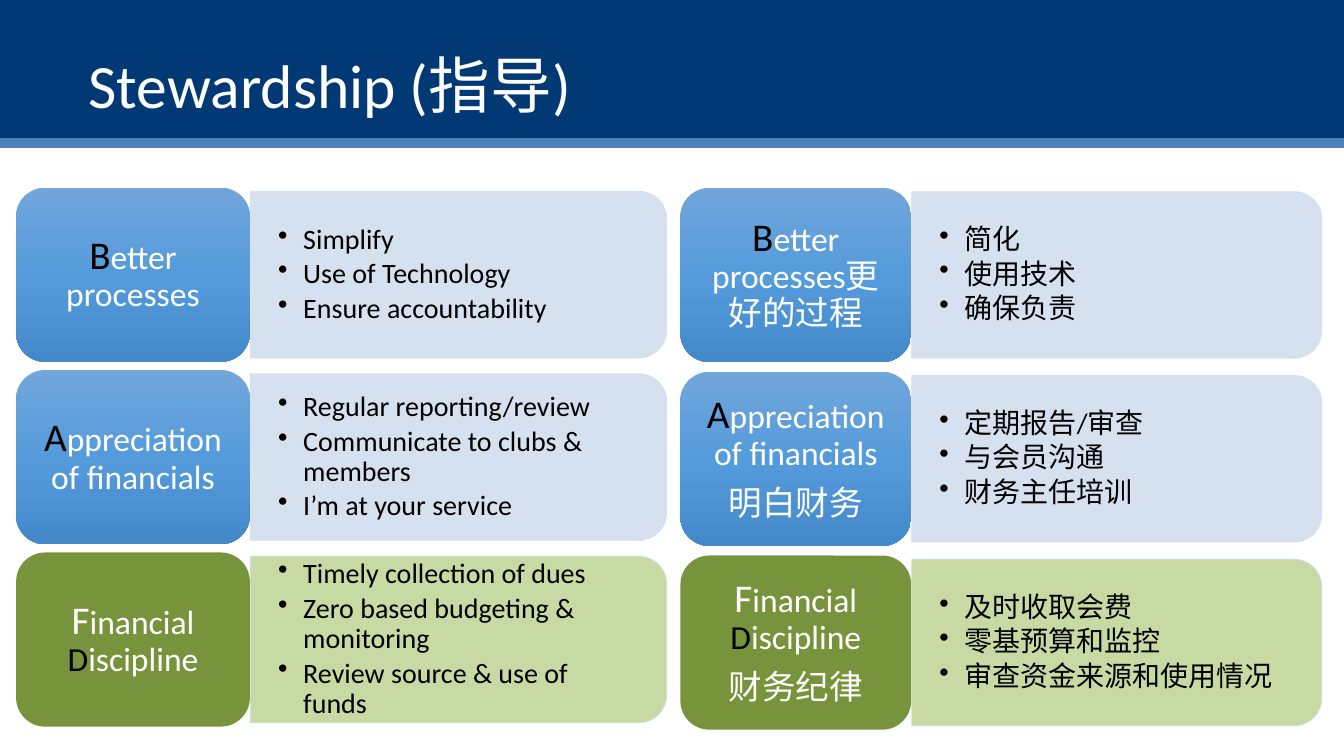
from typing import NamedTuple

from lxml import etree
from pptx import Presentation
from pptx import util as u
from pptx.dml.color import RGBColor
from pptx.enum import shapes, text
from pptx.oxml.ns import qn

# Colours
NAVY = RGBColor(0x00, 0x39, 0x74)
RULE = RGBColor(0x4F, 0x81, 0xBD)
WHITE = RGBColor(0xFF, 0xFF, 0xFF)
BLACK = RGBColor(0x00, 0x00, 0x00)
PALE = RGBColor(0xD2, 0xDE, 0xEF)
LIME = RGBColor(0xC3, 0xD6, 0x9B)
OLIVE = RGBColor(0x77, 0x93, 0x3C)
BLUES = (("0", "71A6DB"), ("50000", "559BDB"), ("100000", "448ACA"))

# Sizes in points
WIDE, HIGH, BAND = 960, 540, 102.2
LABEL_H, PANEL_H = 124.4, 119
EDGE = 6.1  # from a label's rim to its text box


class Run(NamedTuple):
    text: str
    size: float
    color: RGBColor


class Box(NamedTuple):
    left: float
    top: float
    width: float
    height: float


class Row(NamedTuple):
    label: list[list[Run]]
    points: list[str]
    green: bool = False


class Column(NamedTuple):
    left: float
    label_w: float
    panel_w: float
    middle: float  # centre of the first row
    pitch: float
    rows: list[Row]


def child(parent, tag: str, **attrs: str):
    return etree.SubElement(parent, qn(tag), attrs)


def centred(left: float, middle: float, width: float, height: float) -> Box:
    return Box(left, middle - height / 2, width, height)


def add_text(slide, box: Box, paras: list[list[Run]], *, pad=(7.2, 3.6),
             align=text.PP_ALIGN.LEFT, spacing: float = 1.0,
             after: int = 0, bullet: str = "") -> None:
    frame = slide.shapes.add_textbox(*map(u.Pt, box)).text_frame
    frame.word_wrap = True
    frame.vertical_anchor = text.MSO_ANCHOR.MIDDLE
    frame.margin_left = frame.margin_right = u.Pt(pad[0])
    frame.margin_top = frame.margin_bottom = u.Pt(pad[1])
    for i, runs in enumerate(paras):
        para = frame.paragraphs[0] if i == 0 else frame.add_paragraph()
        para.alignment = align
        para.line_spacing = spacing
        props = para._p.get_or_add_pPr()
        if after:
            child(child(props, "a:spcAft"), "a:spcPct", val=str(after * 1000))
        if bullet:
            para.level = 1
            props.set("marL", str(u.Pt(18)))
            props.set("indent", str(u.Pt(-18)))
            child(props, "a:buChar", char=bullet)
        for item in runs:
            run = para.add_run()
            run.text = item.text
            run.font.name = "Calibri"
            run.font.size = u.Pt(item.size)
            run.font.color.rgb = item.color


def add_shape(slide, kind, box: Box, color: RGBColor):
    shape = slide.shapes.add_shape(kind, *map(u.Pt, box))
    shape.shadow.inherit = False
    shape.fill.solid()
    shape.fill.fore_color.rgb = color
    shape.line.fill.background()
    return shape


def add_panel(slide, box: Box, color: RGBColor) -> None:
    # Drawn upright, then turned so the round corners face right
    turned = Box(box.left + (box.width - box.height) / 2,
                 box.top + (box.height - box.width) / 2,
                 box.height, box.width)
    kind = shapes.MSO_SHAPE.ROUND_2_SAME_RECTANGLE
    panel = add_shape(slide, kind, turned, color)
    panel.rotation = 90
    panel.line.color.rgb = PALE
    panel.line.width = u.Pt(0.5)
    for tint in panel._element.spPr.iter(qn("a:srgbClr")):
        child(tint, "a:alpha", val="90000")


def add_label(slide, box: Box, green: bool) -> None:
    label = add_shape(slide, shapes.MSO_SHAPE.ROUNDED_RECTANGLE, box, OLIVE)
    if green:
        return
    label.fill.gradient()
    label.fill.gradient_angle = 270
    stops = label._element.spPr.find(".//" + qn("a:gsLst"))
    stops.clear()
    for pos, color in BLUES:
        child(child(stops, "a:gs", pos=pos), "a:srgbClr", val=color)


def add_column(slide, col: Column) -> None:
    for i, row in enumerate(col.rows):
        mid = col.middle + i * col.pitch
        start = col.left + col.label_w
        add_panel(slide, centred(start + 0.3, mid, col.panel_w, PANEL_H),
                  LIME if row.green else PALE)
        add_text(slide, centred(start + 0.7, mid, col.panel_w - 5.9, 107.3),
                 [[Run(point, 20, BLACK)] for point in row.points],
                 pad=(19.4, 10.1), spacing=0.9, after=15, bullet="•")
        add_label(slide, centred(col.left, mid, col.label_w, LABEL_H),
                  row.green)
        add_text(slide, centred(col.left + EDGE, mid, col.label_w - 2 * EDGE,
                                LABEL_H - 2 * EDGE),
                 row.label, pad=(8.6, 4.3), align=text.PP_ALIGN.CENTER,
                 spacing=0.9, after=35)


def lead(first: str, rest: str) -> list[Run]:
    return [Run(first, 28, BLACK), Run(rest, 24, WHITE)]


# Wording
DUTY = [Run("F", 28, WHITE), Run("inancial ", 24, WHITE),
        Run("D", 24, BLACK), Run("iscipline", 24, WHITE)]
VALUE = lead("A", "ppreciation of financials")

ENGLISH = [
    Row([lead("B", "etter processes")],
        ["Simplify", "Use of Technology", "Ensure accountability"]),
    Row([VALUE], ["Regular reporting/review",
                  "Communicate to clubs & members", "I’m at your service"]),
    Row([DUTY], ["Timely collection of dues",
                 "Zero based budgeting & monitoring",
                 "Review source & use of funds"], green=True),
]
CHINESE = [
    Row([lead("B", "etter processes更好的过程")],
        ["简化", "使用技术", "确保负责"]),
    Row([VALUE, [Run("明白财务", 24, WHITE)]],
        ["定期报告/审查", "与会员沟通", "财务主任培训"]),
    Row([DUTY, [Run("财务纪律", 24, WHITE)]],
        ["及时收取会费", "零基预算和监控", "审查资金来源和使用情况"],
        green=True),
]
COLUMNS = [
    Column(11.5, 167, 297.4, 196.2, 130.3, ENGLISH),
    Column(486, 164.9, 293, 196.4, 131.3, CHINESE),
]


def main() -> None:
    deck = Presentation()
    deck.slide_width, deck.slide_height = u.Pt(WIDE), u.Pt(HIGH)
    slide = deck.slides.add_slide(deck.slide_layouts[6])

    # Header
    add_shape(slide, shapes.MSO_SHAPE.RECTANGLE, Box(0, 0, WIDE, BAND), NAVY)
    rule = slide.shapes.add_connector(
        shapes.MSO_CONNECTOR.STRAIGHT, 0, u.Pt(BAND), u.Pt(WIDE), u.Pt(BAND))
    rule.line.color.rgb = RULE
    rule.line.width = u.Pt(7)
    child(rule._element.spPr, "a:effectLst")
    add_text(slide, Box(56.2, 18, 864, 84.2),
             [[Run("Stewardship (指导)", 44, WHITE)]])

    # Body
    for col in COLUMNS:
        add_column(slide, col)
    deck.save("out.pptx")


if __name__ == "__main__":
    main()
